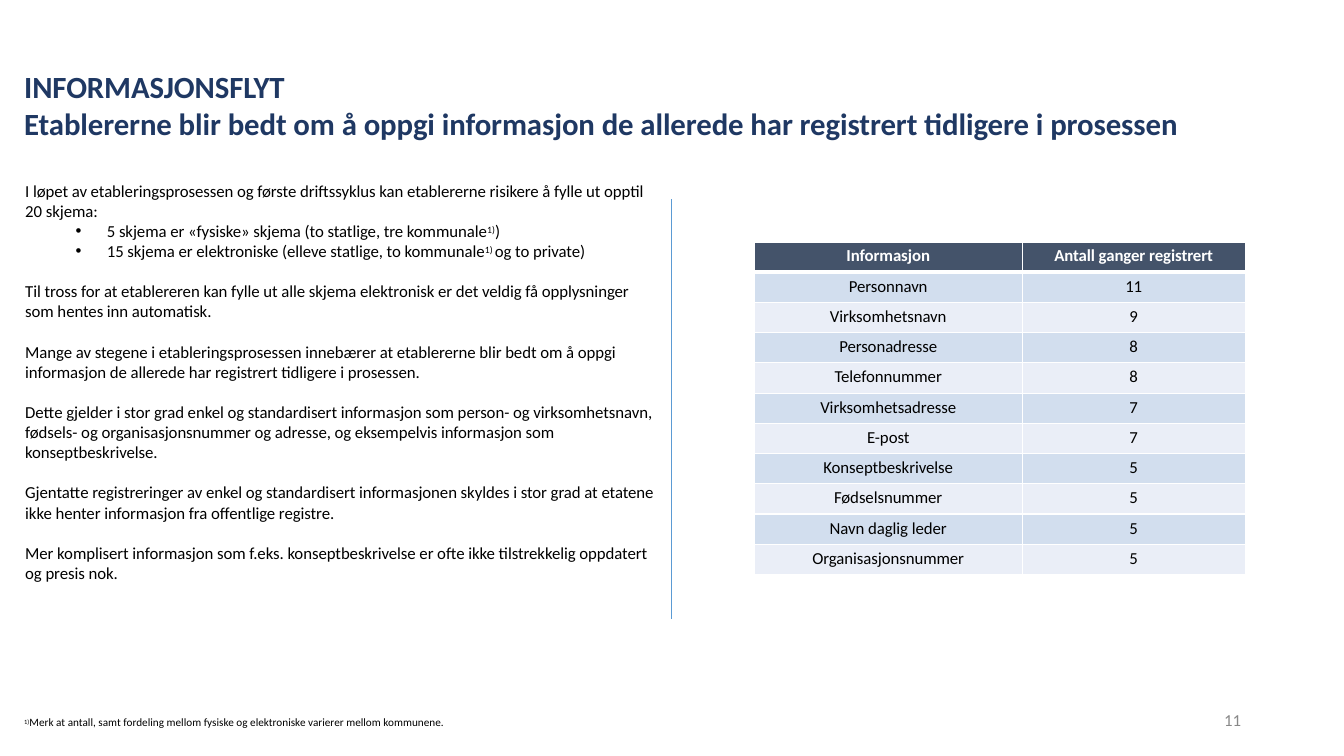
from lxml import etree
from pptx import Presentation
from pptx.dml import color
from pptx.enum import shapes, text
from pptx.oxml import ns
from pptx.util import Inches, Pt

FONT = "Calibri"
TITLE = [
    "INFORMASJONSFLYT",
    "Etablererne blir bedt om å oppgi informasjon de allerede har registrert tidligere i prosessen",
]
BODY = [
    ("intro", "I løpet av etableringsprosessen og første driftssyklus kan etablererne risikere å fylle ut opptil 20 skjema:"),
    ("bullet", "5 skjema er «fysiske» skjema (to statlige, tre kommunale^1)^)"),
    ("bullet", "15 skjema er elektroniske (elleve statlige, to kommunale^1) ^og to private)"),
    ("para", "Til tross for at etablereren kan fylle ut alle skjema elektronisk er det veldig få opplysninger som hentes inn automatisk."),
    ("para", "Mange av stegene i etableringsprosessen innebærer at etablererne blir bedt om å oppgi informasjon de allerede har registrert tidligere i prosessen."),
    ("para", "Dette gjelder i stor grad enkel og standardisert informasjon som person- og virksomhetsnavn, fødsels- og organisasjonsnummer og adresse, og eksempelvis informasjon som konseptbeskrivelse."),
    ("para", "Gjentatte registreringer av enkel og standardisert informasjonen skyldes i stor grad at etatene ikke henter informasjon fra offentlige registre."),
    ("para", "Mer komplisert informasjon som f.eks. konseptbeskrivelse er ofte ikke tilstrekkelig oppdatert og presis nok."),
]
ROWS = [
    ("Informasjon", "Antall ganger registrert"),
    ("Personnavn", "11"),
    ("Virksomhetsnavn", "9"),
    ("Personadresse", "8"),
    ("Telefonnummer", "8"),
    ("Virksomhetsadresse", "7"),
    ("E-post", "7"),
    ("Konseptbeskrivelse", "5"),
    ("Fødselsnummer", "5"),
    ("Navn daglig leder", "5"),
    ("Organisasjonsnummer", "5"),
]
FOOTNOTE = "^1)^Merk at antall, samt fordeling mellom fysiske og elektroniske varierer mellom kommunene."


def rgb(value):
    return color.RGBColor.from_string(value)


def add_xml(parent, tag, **attrs):
    return etree.SubElement(parent, ns.qn(tag), **attrs)


def write(p, content, size, ink, bold=False, spacing=-5):
    for i, part in enumerate(content.split("^")):
        if not part:
            continue
        r = p.add_run()
        r.text = part
        r.font.name, r.font.size, r.font.bold = FONT, Pt(size), bold
        r.font.color.rgb = rgb(ink)
        rPr = r._r.get_or_add_rPr()
        rPr.set("spc", str(spacing))
        if i % 2:
            rPr.set("baseline", "25000")


def place(sp, box, left=0, top=0, right=0):
    sp.left, sp.top, sp.width, sp.height = [Inches(v) for v in box]
    tf = sp.text_frame
    tf.word_wrap = True
    tf.auto_size = text.MSO_AUTO_SIZE.NONE
    tf.vertical_anchor = text.MSO_ANCHOR.TOP
    tf.margin_left, tf.margin_top = Inches(left), Inches(top)
    tf.margin_right, tf.margin_bottom = Inches(right), 0
    return tf


def next_paragraph(tf, i):
    return tf.add_paragraph() if i else tf.paragraphs[0]


def add_title(s, box):
    tf = place(s.shapes.title, box, left=0.01, top=0.01)
    for i, line in enumerate(TITLE):
        p = next_paragraph(tf, i)
        p.alignment = text.PP_ALIGN.LEFT
        write(p, line, 22, "1F3863", bold=True)


def add_body(s, box):
    tf = place(s.placeholders[1], box, top=0.01, right=0.05)
    for i, (kind, line) in enumerate(BODY):
        p = next_paragraph(tf, i)
        p.space_before = Pt(14.3 if kind == "para" else 0)
        pPr = p._p.get_or_add_pPr()
        bullet = kind == "bullet"
        pPr.set("marL", str(Inches(0.91 if bullet else 0.1)))
        pPr.set("indent", str(Inches(-0.31 if bullet else 0)))
        if bullet:
            add_xml(pPr, "a:buFont", typeface="Arial")
            add_xml(pPr, "a:buChar", char="•")
        else:
            add_xml(pPr, "a:buNone")
        write(p, line, 12, "000000")


def add_divider(s, x, top, height):
    line = s.shapes.add_connector(
        shapes.MSO_CONNECTOR.STRAIGHT, Inches(x), Inches(top + height), Inches(x), Inches(top))
    line.line.color.rgb = rgb("5B9BD4")
    line.line.width = Pt(0.48)
    add_xml(line._element.spPr, "a:effectLst")


def add_borders(cell, row):
    tcPr = cell._tc.get_or_add_tcPr()
    for side in "LRTB":
        thick = (row, side) in ((0, "B"), (1, "T"))
        ln = add_xml(tcPr, f"a:ln{side}", w=str(Pt(3 if thick else 1)))
        add_xml(add_xml(ln, "a:solidFill"), "a:srgbClr", val="FFFFFF")


def add_counts(s, box):
    table = s.shapes.add_table(len(ROWS), 2, *[Inches(v) for v in box]).table
    first = 2.66
    table.columns[0].width = Inches(first)
    table.columns[1].width = Inches(box[2] - first)
    for i, values in enumerate(ROWS):
        table.rows[i].height = Inches(box[3] / len(ROWS))
        head = i == 0
        fill = "44536A" if head else ("EAEEF7", "D2DEEE")[i % 2]
        for j, value in enumerate(values):
            cell = table.cell(i, j)
            add_borders(cell, i)
            cell.fill.solid()
            cell.fill.fore_color.rgb = rgb(fill)
            cell.margin_left = cell.margin_right = cell.margin_bottom = 0
            cell.margin_top = Inches(0.04)
            p = cell.text_frame.paragraphs[0]
            p.alignment = text.PP_ALIGN.CENTER
            write(p, value, 12, "FFFFFF" if head else "000000", bold=head)


def add_note(s, box, content, size, ink, leading, left):
    sp = s.shapes.add_textbox(*[Inches(v) for v in box])
    p = place(sp, box, left=left).paragraphs[0]
    p.line_spacing = Pt(leading)
    write(p, content, size, ink, spacing=0)


def main():
    prs = Presentation()
    prs.slide_width, prs.slide_height = Inches(13.33), Inches(7.5)
    s = prs.slides.add_slide(prs.slide_layouts[1])
    add_title(s, (0.23, 0.66, 11.57, 0.76))
    add_body(s, (0.15, 1.78, 6.45, 4.03))
    add_divider(s, 6.66, 1.97, 4.17)
    add_counts(s, (7.48, 2.4, 4.87, 3.3))
    add_note(s, (12.1, 7.07, 0.25, 0.19), "11", 12, "888888", 12.4, 0.04)
    add_note(s, (0.23, 7.11, 4.21, 0.14), FOOTNOTE, 8, "000000", 8.9, 0.01)
    prs.save("out.pptx")


if __name__ == "__main__":
    main()
